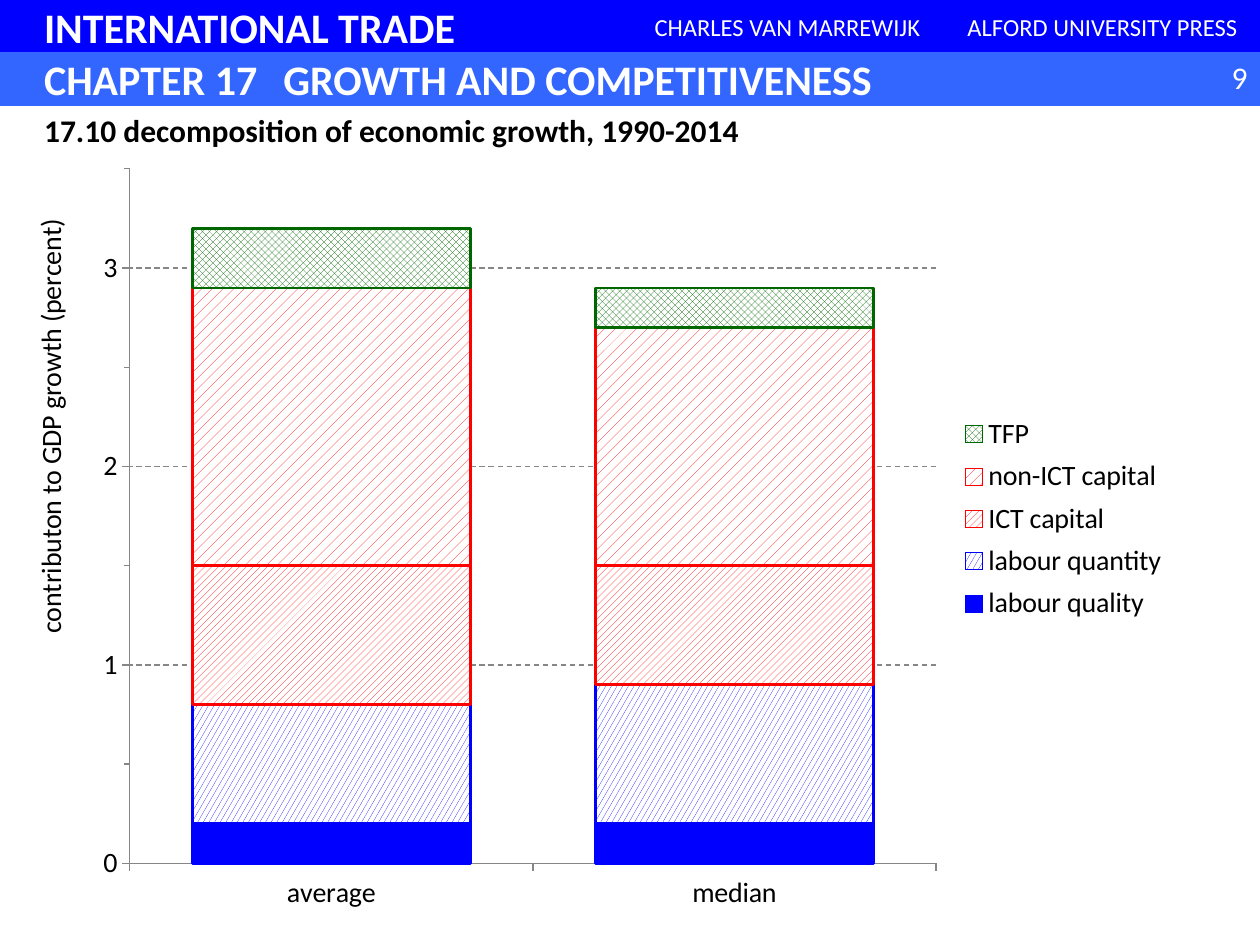
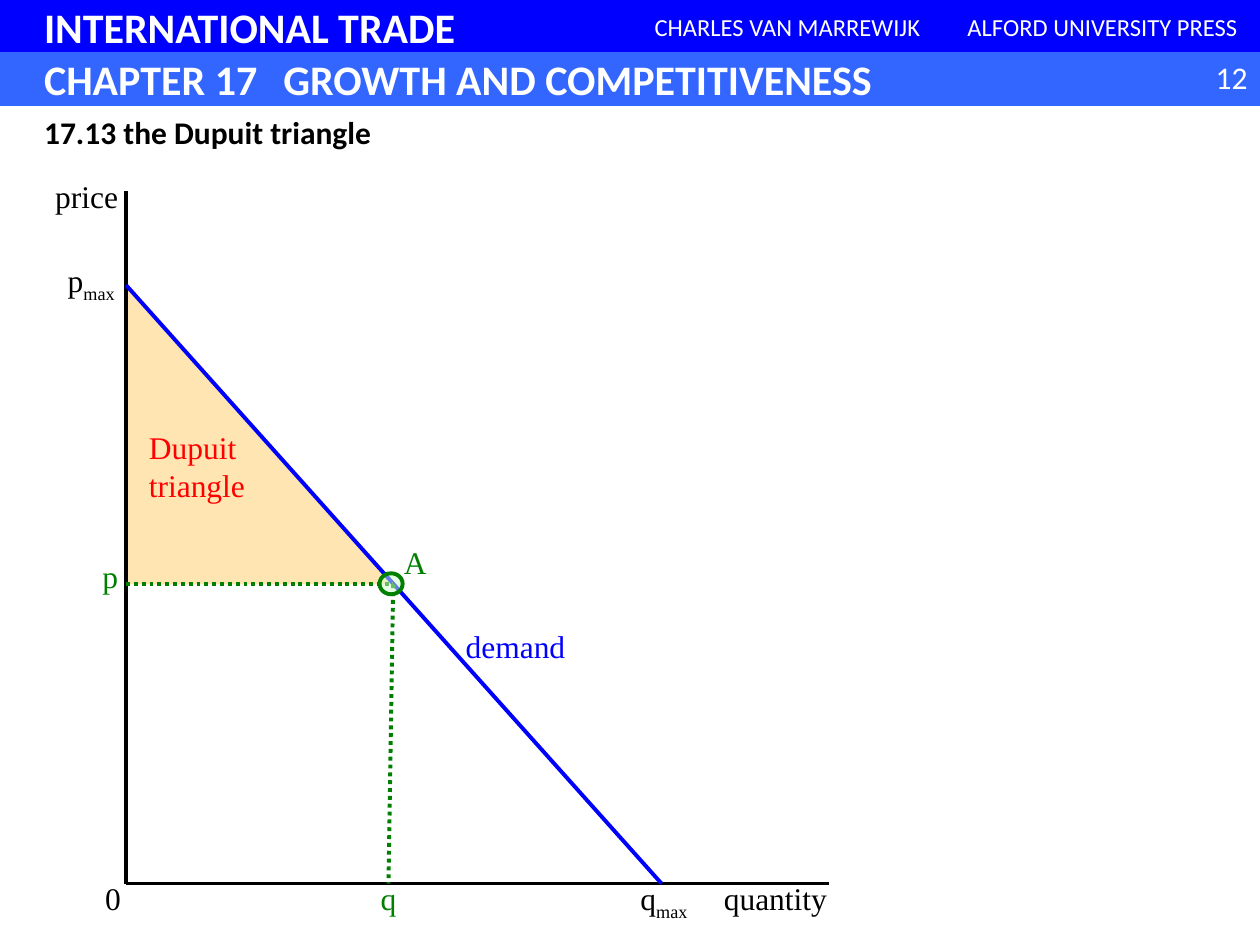
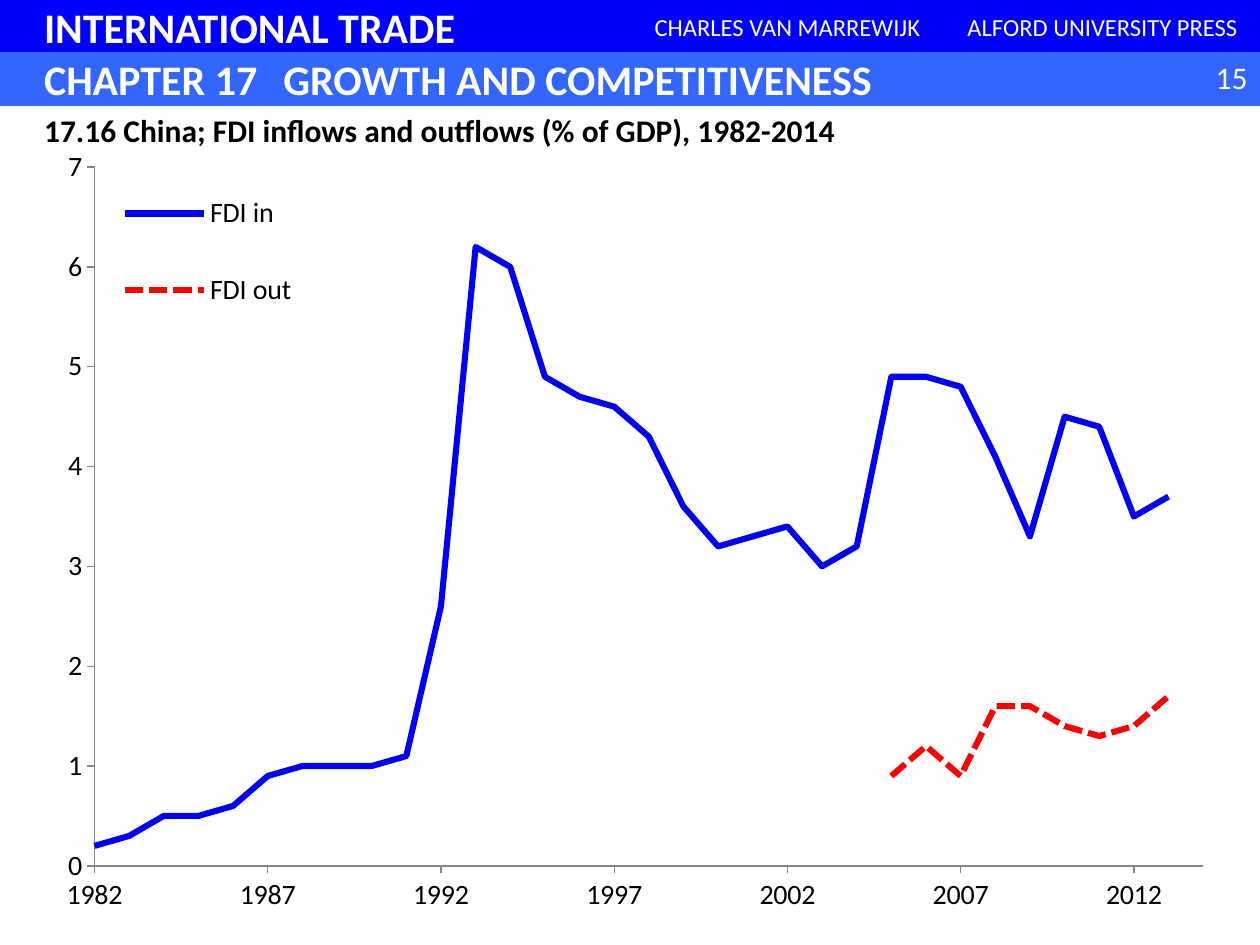
from dataclasses import dataclass

from lxml import etree
from pptx import Presentation
from pptx import util as u
from pptx.chart import data as chart_data
from pptx.dml.color import RGBColor
from pptx.enum import chart as charts, dml, shapes, text
from pptx.oxml import ns

COLOURS = {
    "band": "0000FF", "chapter": "3366FF", "paper": "FFFFFF", "ink": "000000",
    "axis": "868686", "blue": "0000FF", "red": "FF0000", "dark green": "006600",
    "green": "008000", "pale green": "CCFFCC", "sand": "FFCC66",
}
SANS, SERIF = "Calibri", "Times New Roman"
CELL = u.Inches(1) / 12  # the slide is a grid of 120 columns by 90 rows
LEFT, CENTRE, RIGHT = text.PP_ALIGN.LEFT, text.PP_ALIGN.CENTER, text.PP_ALIGN.RIGHT


@dataclass
class Box:
    col: float
    row: float
    cols: float
    rows: float

    def point(self, col, row):
        return u.Emu(round((self.col + col) * CELL)), u.Emu(round((self.row + row) * CELL))

    def area(self, col=0, row=0, cols=None, rows=None):
        cols = self.cols if cols is None else cols
        rows = self.rows if rows is None else rows
        return (*self.point(col, row), u.Emu(round(cols * CELL)), u.Emu(round(rows * CELL)))


HEADER = Box(0, 0, 120, 10)
BODY = Box(0, 10, 120, 80)


def colour(name):
    return RGBColor.from_string(COLOURS[name])


# ---- text and shapes ----
def set_font(font, size=18, ink="ink", face=SANS, bold=False):
    font.size, font.name, font.bold = u.Pt(size), face, bold
    font.color.rgb = colour(ink)


def write(frame, words, subscript="", align=LEFT, anchor=text.MSO_ANCHOR.TOP,
          wrap=True, **font):
    frame.word_wrap, frame.vertical_anchor = wrap, anchor
    frame.auto_size = text.MSO_AUTO_SIZE.NONE
    para = frame.paragraphs[0]
    para.alignment = align
    for part in filter(None, (words, subscript)):
        span = para.add_run()
        span.text = part
        set_font(span.font, **font)
    if subscript:
        span._r.get_or_add_rPr().set("baseline", "-25000")
    return para


def add_text(page, area, words, **style):
    box = page.shapes.add_textbox(*area)
    write(box.text_frame, words, **style)


def add_shape(page, kind, area, fill, line=None, width=0.75, alpha=None):
    shape = page.shapes.add_shape(kind, *area)
    shape.shadow.inherit = False
    shape.fill.solid()
    shape.fill.fore_color.rgb = colour(fill)
    if alpha:
        tint = shape.element.spPr.find(ns.qn("a:solidFill")).find(ns.qn("a:srgbClr"))
        etree.SubElement(tint, ns.qn("a:alpha")).set("val", str(alpha * 1000))
    if line:
        set_line(shape.line, line, width)
    else:
        shape.line.fill.background()
    return shape


def set_line(line, ink, width, dash=None):
    line.color.rgb, line.width = colour(ink), u.Pt(width)
    if dash:
        line.dash_style = dash


def add_line(page, start, end, ink, dash=None):
    line = page.shapes.add_connector(shapes.MSO_CONNECTOR.STRAIGHT, *start, *end)
    set_line(line.line, ink, 2.25, dash)
    etree.SubElement(line.element.spPr, ns.qn("a:effectLst"))


# ---- shared header ----
def add_bands(page, layout, box):
    """Build the header bands and hand them to the layout."""
    half = box.rows / 2
    bands = [
        ((0, 0, box.cols, half), "band", "INTERNATIONAL TRADE", 24, LEFT),
        ((60, 0, 30, half), "band", "CHARLES VAN MARREWIJK", 14, CENTRE),
        ((90, 0, 30, half), "band", "ALFORD UNIVERSITY PRESS", 14, CENTRE),
        ((0, half, box.cols, half), "chapter",
         "CHAPTER 17\tGROWTH AND COMPETITIVENESS", 24, LEFT),
    ]
    for cells, fill, words, size, align in bands:
        band = add_shape(page, shapes.MSO_SHAPE.RECTANGLE, box.area(*cells), fill, fill)
        if align == LEFT:
            band.text_frame.margin_left = u.Inches(0.35)
        para = write(band.text_frame, words, align=align, anchor=text.MSO_ANCHOR.MIDDLE,
                     size=size, ink="paper", bold=size == 24)
        if "\t" in words:
            stops = etree.SubElement(para._p.get_or_add_pPr(), ns.qn("a:tabLst"))
            stop = etree.SubElement(stops, ns.qn("a:tab"))
            stop.set("pos", str(u.Inches(1.9)))
            stop.set("algn", "l")
        layout.shapes.element.append(band.element)


def add_page(deck, layout, number, title, title_row):
    page = deck.slides.add_slide(layout)
    if len(deck.slides) == 1:
        add_bands(page, layout, HEADER)
    heading = page.shapes.title
    heading.left, heading.top, heading.width, heading.height = BODY.area(3, title_row, 87, 4.8)
    write(heading.text_frame, title, bold=True)
    add_text(page, HEADER.area(112, 4.9, 8, 4.8), number, align=RIGHT, ink="paper")
    return page


# ---- charts ----
def set_layout(parent, index, inner=False, **percents):
    """Place a chart part by percentages (x, y, w, h) of the chart's size."""
    for old in parent.findall(ns.qn("c:layout")):
        parent.remove(old)
    layout = etree.Element(ns.qn("c:layout"))
    parent.insert(index, layout)
    manual = etree.SubElement(layout, ns.qn("c:manualLayout"))
    settings = {"layoutTarget": "inner"} if inner else {}
    settings |= {"xMode": "edge", "yMode": "edge"}
    settings |= {tag: percent / 100 for tag, percent in percents.items()}
    for tag, value in settings.items():
        etree.SubElement(manual, ns.qn(f"c:{tag}")).set("val", str(value))


def add_chart(page, box, kind, data, plot, legend, place):
    chart = page.shapes.add_chart(kind, *box.area(), data).chart
    space = chart.element
    area = etree.Element(ns.qn("c:spPr"))
    etree.SubElement(area, ns.qn("a:noFill"))
    etree.SubElement(etree.SubElement(area, ns.qn("a:ln")), ns.qn("a:noFill"))
    space.find(ns.qn("c:chart")).addnext(area)
    set_font(chart.font, size=10)
    chart.has_title = False
    chart.plots[0].vary_by_categories = False
    set_layout(space.find(".//" + ns.qn("c:plotArea")), 0, inner=True, **plot)
    chart.has_legend = True
    chart.legend.position = place
    chart.legend.include_in_layout = False
    set_font(chart.legend.font, size=16)
    set_layout(space.find(".//" + ns.qn("c:legend")), 1, **legend)
    for axis in (chart.category_axis, chart.value_axis):
        axis.has_major_gridlines = False
        axis.major_tick_mark = charts.XL_TICK_MARK.OUTSIDE
        set_font(axis.tick_labels.font, size=16)
        set_line(axis.format.line, "axis", 0.75)
    return chart


def set_scale(axis, low, high, step):
    axis.minimum_scale, axis.maximum_scale, axis.major_unit = low, high, step
    axis.tick_labels.number_format = "0"
    axis.tick_labels.number_format_is_linked = False


def growth_chart(page, box):
    pattern = dml.MSO_PATTERN
    parts = [
        ("labour quality", (0.2, 0.2), "blue", None),
        ("labour quantity", (0.6, 0.7), "blue", pattern.LARGE_CONFETTI),
        ("ICT capital", (0.7, 0.6), "red", pattern.WIDE_UPWARD_DIAGONAL),
        ("non-ICT capital", (1.4, 1.2), "red", pattern.PERCENT_20),
        ("TFP", (0.3, 0.2), "dark green", pattern.LARGE_CHECKER_BOARD),
    ]
    data = chart_data.CategoryChartData()
    data.categories = ["average", "median"]
    for name, values, _, _ in parts:
        data.add_series(name, values)
    chart = add_chart(page, box, charts.XL_CHART_TYPE.COLUMN_STACKED, data,
                      dict(x=10.3, y=7.6, w=64, h=82.7),
                      dict(x=75.4, y=36.2, w=18, h=26.2),
                      charts.XL_LEGEND_POSITION.RIGHT)
    chart.plots[0].gap_width, chart.plots[0].overlap = 45, 100
    for series, (_, _, ink, hatch) in zip(chart.plots[0].series, parts):
        fill = series.format.fill
        if hatch:
            fill.patterned()
            fill.pattern = hatch
            fill.back_color.rgb = colour("paper")
        else:
            fill.solid()
        fill.fore_color.rgb = colour(ink)
        set_line(series.format.line, ink, 1.5)
    # value axis with dashed gridlines and half-step ticks
    axis = chart.value_axis
    set_scale(axis, 0, 3.5, 1)
    axis.minor_unit, axis.minor_tick_mark = 0.5, charts.XL_TICK_MARK.OUTSIDE
    axis.has_major_gridlines = True
    set_line(axis.major_gridlines.format.line, "axis", 0.75, dml.MSO_LINE.DASH)
    span = axis.axis_title.text_frame.paragraphs[0].add_run()
    span.text = "contributon to GDP growth (percent)"
    set_font(span.font, size=16)
    set_layout(chart.element.find(".//" + ns.qn("c:valAx") + "/" + ns.qn("c:title")), 1,
               x=2.1, y=13)


def investment_chart(page, box):
    first_year, last_year = 1982, 2014
    flows = [
        ("FDI in", "blue", None,
         [0.2, 0.3, 0.5, 0.5, 0.6, 0.9, 1, 1, 1, 1.1, 2.6, 6.2, 6, 4.9, 4.7, 4.6, 4.3,
          3.6, 3.2, 3.3, 3.4, 3, 3.2, 4.9, 4.9, 4.8, 4.1, 3.3, 4.5, 4.4, 3.5, 3.7, None]),
        ("FDI out", "red", dml.MSO_LINE.SQUARE_DOT,
         [None] * 23 + [0.9, 1.2, 0.9, 1.6, 1.6, 1.4, 1.3, 1.4, 1.7, None]),
    ]
    data = chart_data.XyChartData()
    for name, _, _, values in flows:
        series = data.add_series(name)
        for year, value in enumerate(values, first_year):
            series.add_data_point(year, value)
    chart = add_chart(page, box, charts.XL_CHART_TYPE.XY_SCATTER_LINES_NO_MARKERS, data,
                      dict(x=7.5, y=7.4, w=88, h=83.2),
                      dict(x=8.5, y=5.8, w=16, h=23.4),
                      charts.XL_LEGEND_POSITION.BOTTOM)
    # years without a figure stay empty
    for point in list(chart.element.iter(ns.qn("c:pt"))):
        if point.findtext(ns.qn("c:v")) in ("None", "", None):
            point.getparent().remove(point)
    set_scale(chart.category_axis, first_year, last_year, 5)
    set_scale(chart.value_axis, 0, 7, 1)
    for series, (_, ink, dash, _) in zip(chart.plots[0].series, flows):
        series.smooth = False
        series.marker.style = charts.XL_MARKER_STYLE.NONE
        set_line(series.format.line, ink, 3.5, dash)


# ---- demand diagram ----
def dupuit_diagram(page, box):
    origin_x, origin_y = 12, 74.15
    price_max, quantity_max = 17.15, 63
    price, quantity = 45.65, 37.45
    dots = dml.MSO_LINE.ROUND_DOT

    add_shape(page, shapes.MSO_SHAPE.RIGHT_TRIANGLE,
              box.area(origin_x, price_max, quantity - origin_x, price - price_max),
              "sand", alpha=50)
    for start, end, ink, dash in [
        ((origin_x, origin_y), (79, origin_y), "ink", None),
        ((origin_x, origin_y), (origin_x, 8.15), "ink", None),
        ((origin_x, price_max), (quantity_max, origin_y), "blue", None),
        ((origin_x, price), (quantity, price), "green", dots),
        ((quantity, price), (37, origin_y), "green", dots),
    ]:
        add_line(page, box.point(*start), box.point(*end), ink, dash)
    add_shape(page, shapes.MSO_SHAPE.OVAL, box.area(36.15, 44.6, 2.2, 2),
              "pale green", "green", 2.25, alpha=50)

    # labels
    below = 73.1
    for words, subscript, col, row, cols, ink in [
        ("price", "", 4, 6.3, 8.5, "ink"),
        ("quantity", "", 67.65, below, 12.4, "ink"),
        ("p", "max", 5, 14.3, 7.4, "ink"),
        ("q", "max", 59.55, below, 7.4, "ink"),
        ("p", "", 8.5, 42.45, 4, "green"),
        ("q", "", 35, below, 4, "green"),
        ("0", "", 8.75, below, 4, "ink"),
        ("demand", "", 43.1, 49.1, 12, "blue"),
        ("A", "", 37.25, 41.1, 4.6, "green"),
    ]:
        add_text(page, box.area(col, row, cols, 4.8), words, subscript=subscript,
                 align=CENTRE, wrap=False, ink=ink, face=SERIF)
    add_text(page, box.area(13, 30.2, 13.9, 8.5), "Dupuit triangle", ink="red", face=SERIF)


def main():
    deck = Presentation()
    deck.slide_width, deck.slide_height = u.Inches(10), u.Inches(7.5)
    layout = deck.slide_layouts.get_by_name("Title Only")
    for holder in list(layout.placeholders)[1:]:
        holder.element.getparent().remove(holder.element)
    for number, title, title_row, draw in [
        ("9", "17.10 decomposition of economic growth, 1990-2014", 0, growth_chart),
        ("12", "17.13 the Dupuit triangle", 0.2, dupuit_diagram),
        ("15", "17.16 China; FDI inflows and outflows (% of GDP), 1982-2014", 0,
         investment_chart),
    ]:
        draw(add_page(deck, layout, number, title, title_row), BODY)
    deck.save("out.pptx")


if __name__ == "__main__":
    main()
